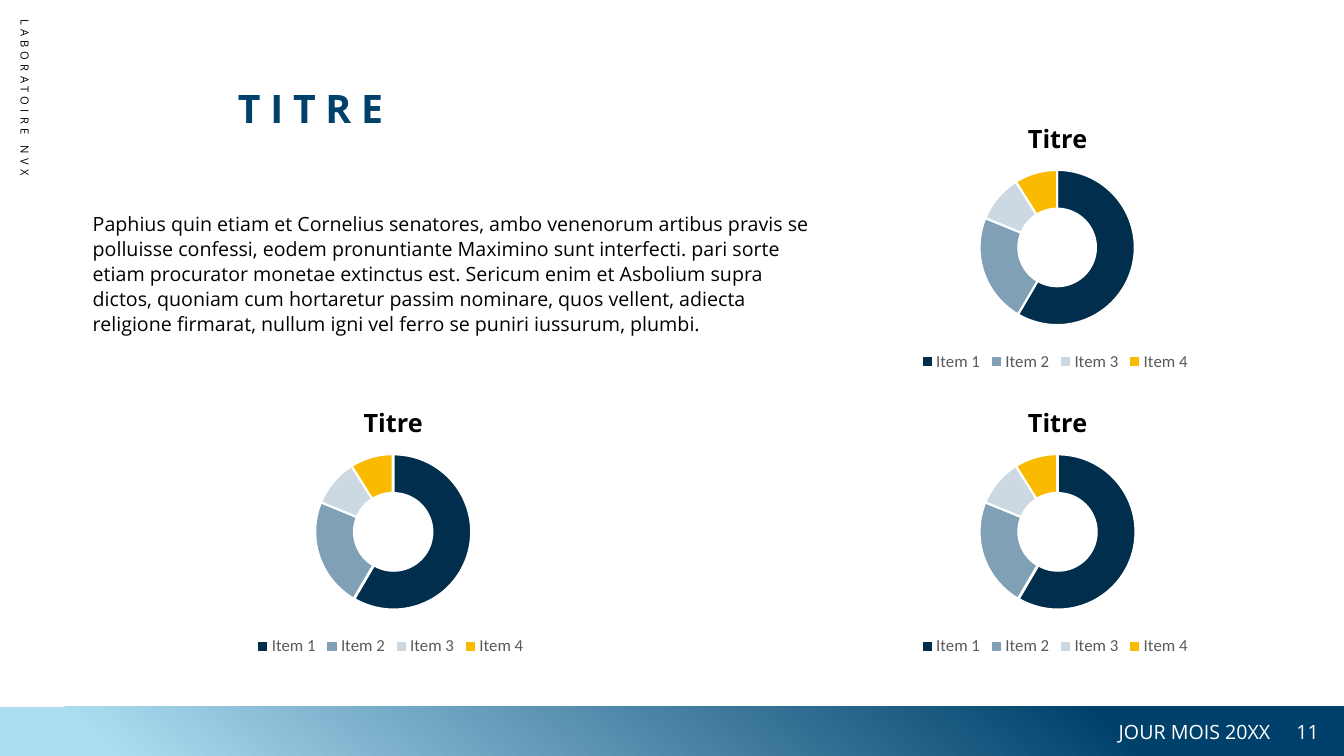
from dataclasses import dataclass

import pptx
import pptx.chart.data
import pptx.dml.color
import pptx.enum.chart
import pptx.enum.dml
import pptx.enum.shapes
import pptx.enum.text
import pptx.oxml
import pptx.oxml.ns
import pptx.util

RGBColor = pptx.dml.color.RGBColor
PP_ALIGN = pptx.enum.text.PP_ALIGN
MSO_ANCHOR = pptx.enum.text.MSO_ANCHOR

NAVY = RGBColor(0x00, 0x2E, 0x4C)
STEEL = RGBColor(0x80, 0xA0, 0xB6)
MIST = RGBColor(0xCC, 0xD9, 0xE2)
GOLD = RGBColor(0xFA, 0xBA, 0x00)
BLUE = RGBColor(0x00, 0x41, 0x6C)
SKY = RGBColor(0xAD, 0xDD, 0xF1)
GREY = RGBColor(0x59, 0x59, 0x59)
BLACK = RGBColor(0x00, 0x00, 0x00)
WHITE = RGBColor(0xFF, 0xFF, 0xFF)

SLIDE_WIDTH = pptx.util.Inches(13.33)
SLIDE_HEIGHT = pptx.util.Inches(7.5)
TEXT_FONT = "Open Sans"
CHART_FONT = "Calibri"

SHARES = {"Item 1": 59, "Item 2": 23, "Item 3": 10, "Item 4": 9}
SHARE_COLORS = [NAVY, STEEL, MIST, GOLD]
CHART_COLUMNS = [12.3, 61.73]
CHART_ROWS = [12.4, 50]

BODY = (
    "Paphius quin etiam et Cornelius senatores, ambo venenorum artibus pravis se "
    "polluisse confessi, eodem pronuntiante Maximino sunt interfecti. pari sorte "
    "etiam procurator monetae extinctus est. Sericum enim et Asbolium supra dictos, "
    "quoniam cum hortaretur passim nominare, quos vellent, adiecta religione "
    "firmarat, nullum igni vel ferro se puniri iussurum, plumbi."
)


@dataclass(frozen=True)
class Area:
    """Percentages of the slide's width and height."""

    left: float
    top: float
    width: float
    height: float

    def lengths(self) -> tuple[int, int, int, int]:
        return (
            round(SLIDE_WIDTH * self.left / 100),
            round(SLIDE_HEIGHT * self.top / 100),
            round(SLIDE_WIDTH * self.width / 100),
            round(SLIDE_HEIGHT * self.height / 100),
        )


@dataclass(frozen=True)
class Doughnut:
    column: int
    row: int
    explosion: int


@dataclass(frozen=True)
class Label:
    text: str
    area: Area
    size: float
    color: RGBColor
    align: PP_ALIGN = PP_ALIGN.LEFT
    rotation: float = 0
    spacing: float = 0


DOUGHNUTS = [Doughnut(0, 1, 2), Doughnut(1, 0, 0), Doughnut(1, 1, 2)]
LABELS = [
    Label("JOUR MOIS 20XX", Area(64.89, 93.47, 30.38, 6.53), 14, WHITE, PP_ALIGN.RIGHT),
    Label("LABORATOIRE NVX", Area(-15, 27.87, 33.75, 6.67), 8, BLACK, rotation=90, spacing=3),
    Label("11", Area(95.72, 93.47, 3.6, 6.53), 14, WHITE),
]


def place(box, area: Area) -> None:
    box.left, box.top, box.width, box.height = area.lengths()


def write(box, text: str, *, size: float, color: RGBColor, bold: bool = False,
          align: PP_ALIGN = PP_ALIGN.LEFT, anchor: MSO_ANCHOR = MSO_ANCHOR.MIDDLE,
          spacing: float = 0, line_spacing: float = 1.0, inset: bool = True) -> None:
    frame = box.text_frame
    frame.word_wrap = True
    frame.auto_size = pptx.enum.text.MSO_AUTO_SIZE.NONE
    frame.vertical_anchor = anchor
    if not inset:
        frame.margin_left = frame.margin_right = 0
        frame.margin_top = frame.margin_bottom = 0
    para = frame.paragraphs[0]
    para.alignment = align
    para.line_spacing = line_spacing
    para.space_before = pptx.util.Pt(0)
    properties = para._p.get_or_add_pPr()
    properties.set("marL", "0")
    properties.set("indent", "0")
    properties.append(pptx.oxml.parse_xml(
        f'<a:buNone {pptx.oxml.ns.nsdecls("a")}/>'))
    span = para.add_run()
    span.text = text
    span.font.name = TEXT_FONT
    span.font.size = pptx.util.Pt(size)
    span.font.bold = bold
    span.font.color.rgb = color
    if spacing:
        span.font._element.set("spc", str(round(spacing * 100)))


def add_band(page) -> None:
    band = page.shapes.add_shape(
        pptx.enum.shapes.MSO_SHAPE.RECTANGLE, *Area(0, 93.47, 100, 6.6).lengths())
    band.shadow.inherit = False
    band.line.fill.background()
    band.fill.gradient()
    band.fill.gradient_angle = 50
    for stop, color, position in zip(band.fill.gradient_stops, [SKY, BLUE], [0.08, 0.82]):
        stop.color.rgb = color
        stop.position = position


def set_layout(element, successors: list[str], **shares: float) -> None:
    qn = pptx.oxml.ns.qn
    for old in element.findall(qn("c:layout")):
        element.remove(old)
    modes = "".join(f'<c:{key}Mode val="edge"/>' for key in ("x", "y"))
    values = "".join(f'<c:{key} val="{value}"/>' for key, value in shares.items())
    target = '<c:layoutTarget val="inner"/>' if "w" in shares else ""
    layout = pptx.oxml.parse_xml(
        f'<c:layout {pptx.oxml.ns.nsdecls("c")}><c:manualLayout>'
        f"{target}{modes}{values}</c:manualLayout></c:layout>")
    following = next(child for child in element
                     if child.tag in [qn(name) for name in successors])
    following.addprevious(layout)


def add_doughnut(page, doughnut: Doughnut) -> None:
    data = pptx.chart.data.CategoryChartData()
    data.categories = list(SHARES)
    data.add_series("Series 1", list(SHARES.values()))
    area = Area(CHART_COLUMNS[doughnut.column], CHART_ROWS[doughnut.row], 33.53, 37.33)
    chart = page.shapes.add_chart(
        pptx.enum.chart.XL_CHART_TYPE.DOUGHNUT, *area.lengths(), data).chart
    chart.font.name = CHART_FONT
    chart.font.size = pptx.util.Pt(10)
    chart.font.color.rgb = BLACK

    chart.has_title = True
    span = chart.chart_title.text_frame.paragraphs[0].add_run()
    span.text = "Titre"
    span.font.name = TEXT_FONT
    span.font.size = pptx.util.Pt(18)
    span.font.bold = True
    span.font.color.rgb = BLACK
    chart.chart_title.include_in_layout = False
    set_layout(chart.chart_title._element, ["c:overlay"], x=0.43, y=0.07)

    chart.has_legend = True
    chart.legend.position = pptx.enum.chart.XL_LEGEND_POSITION.BOTTOM
    chart.legend.include_in_layout = False
    chart.legend.font.name = CHART_FONT
    chart.legend.font.size = pptx.util.Pt(12)
    chart.legend.font.color.rgb = GREY

    plot = chart.plots[0]
    plot.vary_by_categories = True
    plot._element.find(pptx.oxml.ns.qn("c:holeSize")).set("val", "75")
    set_layout(plot._element.getparent(), ["c:doughnutChart"], x=0.33, y=0.27, w=0.35, h=0.55)
    for index, color in enumerate(SHARE_COLORS):
        point = plot.series[0].points[index]
        point.format.fill.solid()
        point.format.fill.fore_color.rgb = color
        point.format.line.color.rgb = WHITE
        point.format.line.width = pptx.util.Pt(1.5)
    if doughnut.explosion:
        first = plot.series[0]._element.find(pptx.oxml.ns.qn("c:dPt"))
        first.find(pptx.oxml.ns.qn("c:spPr")).addprevious(pptx.oxml.parse_xml(
            f'<c:explosion {pptx.oxml.ns.nsdecls("c")} val="{doughnut.explosion}"/>'))


def main() -> None:
    deck = pptx.Presentation()
    deck.slide_width, deck.slide_height = SLIDE_WIDTH, SLIDE_HEIGHT
    page = deck.slides.add_slide(deck.slide_layouts[1])
    add_band(page)
    for label in LABELS:
        box = page.shapes.add_textbox(*label.area.lengths())
        box.rotation = label.rotation
        write(box, label.text, size=label.size, color=label.color,
              align=label.align, spacing=label.spacing)
    title, body = page.shapes.title, page.placeholders[1]
    place(title, Area(17.7, 5.33, 43.13, 18))
    write(title, "TITRE", size=28, color=BLUE, bold=True, spacing=7, inset=False)
    place(body, Area(6.9, 27.87, 53.93, 20.93))
    write(body, BODY, size=14, color=BLACK, anchor=MSO_ANCHOR.TOP,
          line_spacing=1.06, inset=False)
    for doughnut in DOUGHNUTS:
        add_doughnut(page, doughnut)
    deck.save("out.pptx")


if __name__ == "__main__":
    main()
